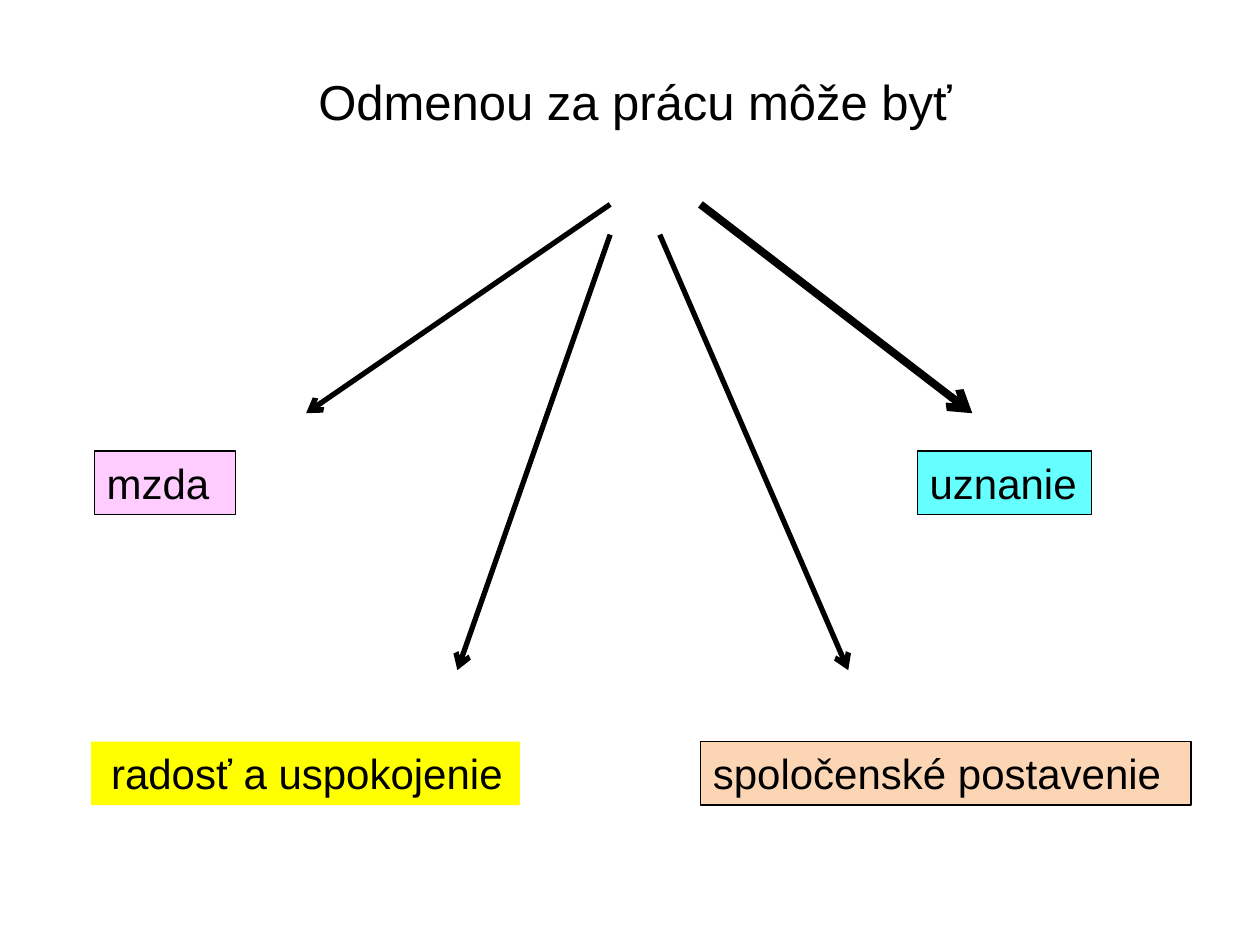
from lxml import etree
from pptx import Presentation
from pptx import util as u
from pptx.dml import color
from pptx.enum import shapes, text
from pptx.oxml import ns

BLACK = "000000"


def rgb(hex_string):
    return color.RGBColor.from_string(hex_string)


class SlideBuilder:
    """Holds the text style and the slide being drawn; lengths are in cm."""

    font_name = "Arial"
    inset = 0.25

    def __init__(self, slide):
        self.slide = slide

    def set_text(self, shape, words, size, indent=0):
        frame = shape.text_frame
        frame.word_wrap = True
        frame.vertical_anchor = text.MSO_ANCHOR.TOP
        frame.margin_left = u.Cm(self.inset + indent)
        frame.margin_right = 0
        paragraph = frame.paragraphs[0]
        paragraph.text = words
        paragraph.alignment = text.PP_ALIGN.LEFT
        paragraph.font.name = self.font_name
        paragraph.font.size = u.Pt(size)
        paragraph.font.color.rgb = rgb(BLACK)

    def title(self, words, left, top, width, height):
        box = self.slide.shapes.add_textbox(
            u.Cm(left), u.Cm(top), u.Cm(width), u.Cm(height))
        self.set_text(box, words, 28)

    def reward(self, words, left, top, width, fill, outlined=True, indent=0):
        shape = self.slide.shapes.add_shape(
            shapes.MSO_SHAPE.RECTANGLE,
            u.Cm(left), u.Cm(top), u.Cm(width), u.Cm(1.28))
        shape.shadow.inherit = False
        shape.fill.solid()
        shape.fill.fore_color.rgb = rgb(fill)
        if outlined:
            shape.line.color.rgb = rgb(BLACK)
            shape.line.width = u.Pt(0.75)
        else:
            shape.line.fill.background()
        self.set_text(shape, words, 24, indent)

    def arrow(self, start, end, weight=3):
        connector = self.slide.shapes.add_connector(
            shapes.MSO_CONNECTOR.STRAIGHT, *map(u.Cm, start + end))
        connector.line.color.rgb = rgb(BLACK)
        connector.line.width = u.Pt(weight)
        properties = connector._element.spPr
        etree.SubElement(properties.find(ns.qn("a:ln")),
                         ns.qn("a:tailEnd"), type="arrow")
        etree.SubElement(properties, ns.qn("a:effectLst"))


def main():
    presentation = Presentation()
    presentation.slide_width = u.Cm(25.4)
    presentation.slide_height = u.Cm(19.05)
    builder = SlideBuilder(
        presentation.slides.add_slide(presentation.slide_layouts[6]))

    builder.title("Odmenou za prácu môže byť", 6.17, 1.32, 13.44, 1.45)

    upper_row, lower_row = 9.09, 14.95
    builder.reward("mzda", 1.9, upper_row, 2.85, "FFCCFF")
    builder.reward("radosť a uspokojenie", 1.84, lower_row, 8.64, "FFFF00",
                   outlined=False, indent=0.15)
    builder.reward("spoločenské postavenie", 14.12, lower_row, 9.89, "FCD5B5")
    builder.reward("uznanie", 18.49, upper_row, 3.51, "66FFFF")

    upper_start, upper_end = 4.12, 8.33
    lower_start, lower_end = 4.73, 13.51
    builder.arrow((12.3, upper_start), (6.17, upper_end))
    builder.arrow((12.3, lower_start), (9.22, lower_end))
    builder.arrow((13.3, lower_start), (17.1, lower_end))
    builder.arrow((14.12, upper_start), (19.6, upper_end), weight=4.5)

    presentation.save("out.pptx")


if __name__ == "__main__":
    main()
